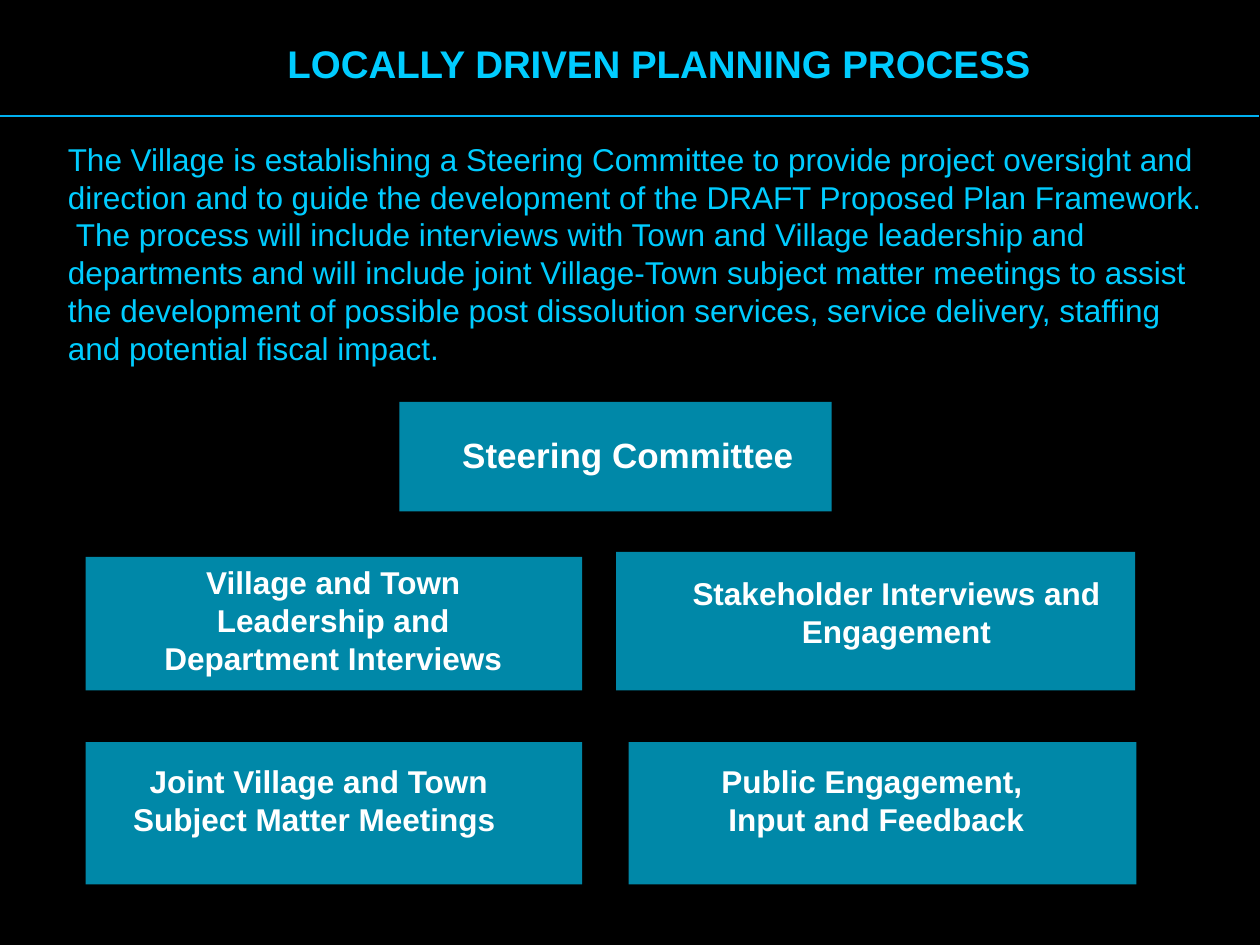
from lxml import etree
from pptx import Presentation
from pptx import util as u
from pptx.dml.color import RGBColor
from pptx.enum import shapes, text
from pptx.oxml import ns

SCALE = 9144
PAGE_SIZE = (1000, 750)
BLACK, CYAN, SKY, TEAL, WHITE = "000000", "00CCFF", "00B0F0", "0088A8", "FFFFFF"
CENTER, LEFT = text.PP_ALIGN.CENTER, text.PP_ALIGN.LEFT

INTRO = (
    "The Village is establishing a Steering Committee to provide project oversight "
    "and direction and to guide the development of the DRAFT Proposed Plan Framework.  "
    "The process will include interviews with Town and Village leadership and "
    "departments and will include joint Village-Town subject matter meetings to assist "
    "the development of possible post dissolution services, service delivery, staffing "
    "and potential fiscal impact."
)

# Each group: panel box, label offset and size within it, lines, format
GROUPS = [
    ((317, 319, 343, 87), (40, 20, 303, 44), ["Steering Committee"],
     {"size": 20, "align": LEFT}),
    ((68, 442, 394, 106), (29, 0, 335, 101),
     ["Village and Town Leadership and Department Interviews"], {}),
    ((489, 438, 412, 110), (46, 13, 353, 71),
     ["Stakeholder Interviews and Engagement"], {}),
    ((68, 589, 394, 113), (13, 11, 344, 71),
     ["Joint Village and Town Subject Matter Meetings "], {}),
    ((499, 589, 403, 113), (34, 11, 325, 71),
     ["Public Engagement, ", "Input and Feedback"], {}),
]


def px(*lengths):
    return [u.Emu(length * SCALE) for length in lengths]


def color(value):
    return RGBColor.from_string(value)


def add_text(page, box, lines, size=18, bold=True, fill=WHITE, align=CENTER):
    frame = page.shapes.add_textbox(*px(*box)).text_frame
    frame.word_wrap = True
    for index, line in enumerate(lines):
        para = frame.paragraphs[0] if index == 0 else frame.add_paragraph()
        para.alignment = align
        span = para.add_run()
        span.text = line
        for name, value in {"name": "Arial", "size": u.Pt(size), "bold": bold}.items():
            setattr(span.font, name, value)
        span.font.color.rgb = color(fill)


def add_header(page, box):
    left, top, width, height = box
    add_text(page, (left + 83, top + 27, 882, 47),
             ["LOCALLY DRIVEN PLANNING PROCESS"], size=22, fill=CYAN)
    bottom = top + height
    rule = page.shapes.add_connector(
        shapes.MSO_CONNECTOR.STRAIGHT, *px(left, bottom, left + width, bottom))
    rule.line.color.rgb = color(SKY)
    rule.line.width = u.Pt(1.5)
    etree.SubElement(rule._element.spPr, ns.qn("a:effectLst"))


def add_intro(page, box):
    add_text(page, box, [INTRO], bold=False, fill=CYAN, align=LEFT)


def add_group(page, box, label, lines, style):
    panel = page.shapes.add_shape(shapes.MSO_SHAPE.RECTANGLE, *px(*box))
    panel.shadow.inherit = False
    panel.fill.solid()
    panel.fill.fore_color.rgb = color(TEAL)
    panel.line.fill.background()
    left, top, width, height = label
    add_text(page, (box[0] + left, box[1] + top, width, height), lines, **style)


def main():
    deck = Presentation()
    deck.slide_width, deck.slide_height = px(*PAGE_SIZE)
    page = deck.slides.add_slide(deck.slide_layouts[6])
    page.background.fill.solid()
    page.background.fill.fore_color.rgb = color(BLACK)
    add_header(page, (-1, 0, 1000, 92))
    add_intro(page, (44, 106, 920, 192))
    for group in GROUPS:
        add_group(page, *group)
    deck.save("out.pptx")


if __name__ == "__main__":
    main()
